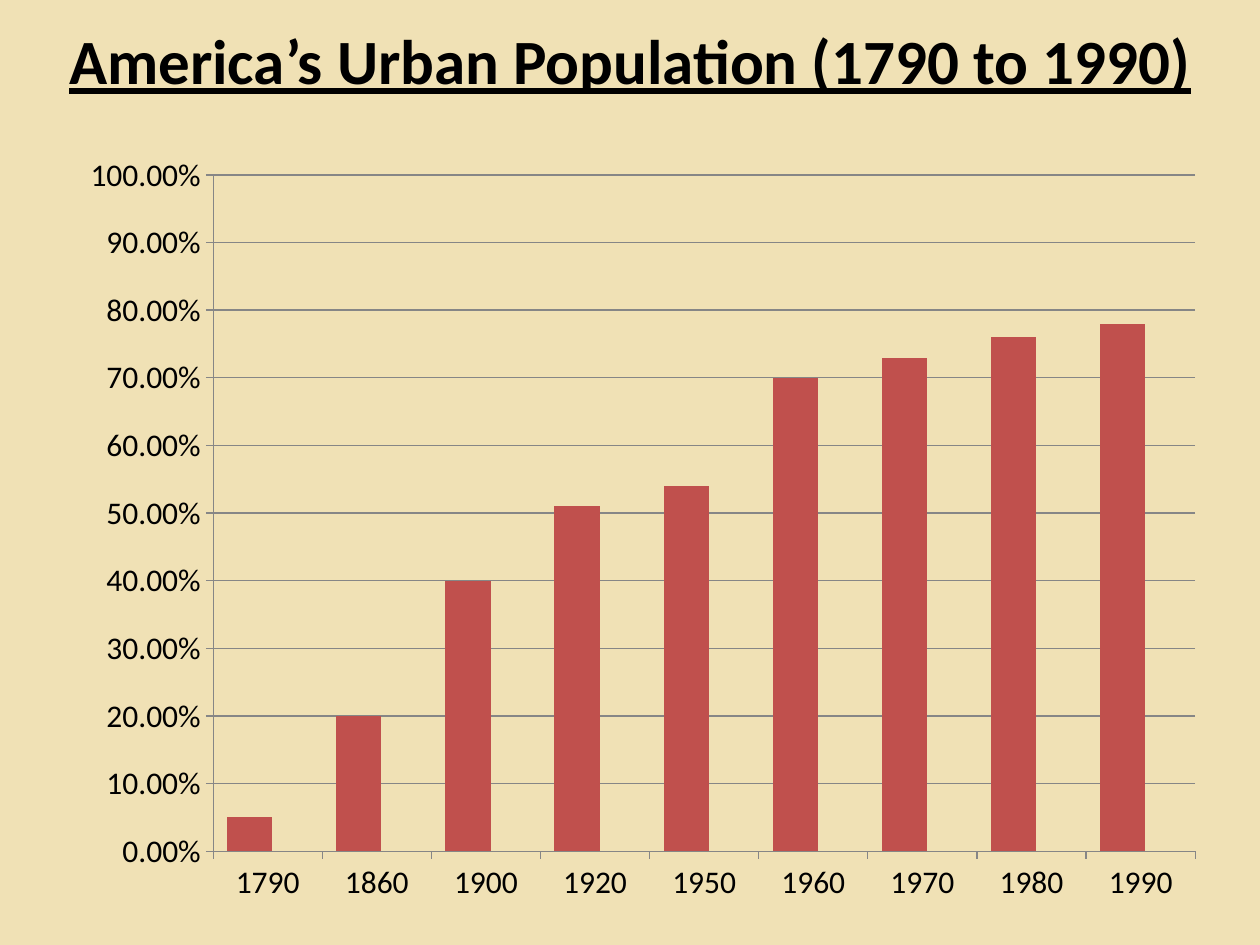
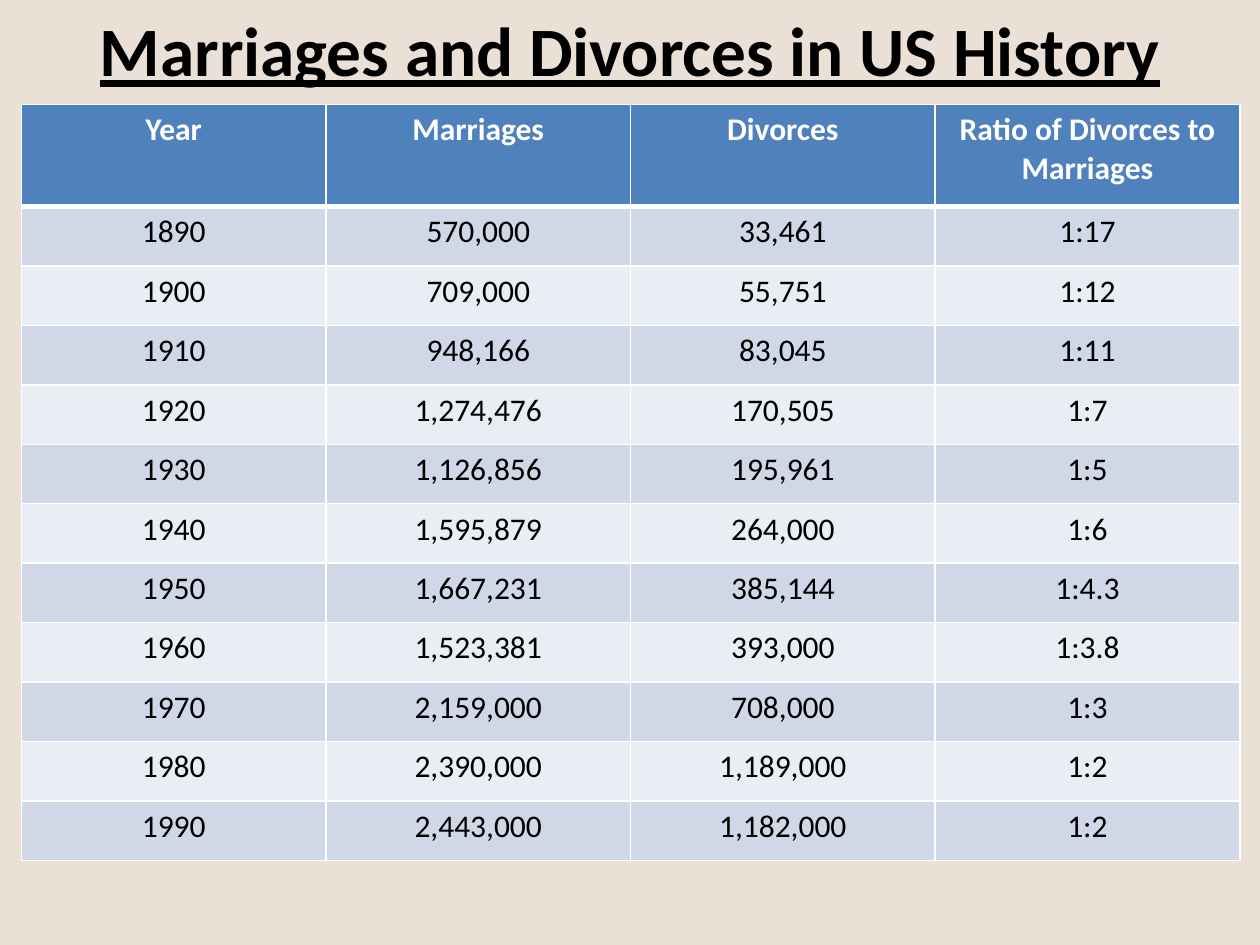
from lxml import etree
from pptx import Presentation
from pptx.chart.data import CategoryChartData
from pptx.dml.color import RGBColor
from pptx.enum.chart import XL_CHART_TYPE, XL_TICK_MARK
from pptx.enum.text import MSO_ANCHOR, PP_ALIGN
from pptx.oxml import parse_xml
from pptx.oxml.ns import nsdecls, qn
from pptx.util import Inches, Pt

COLUMNS = XL_CHART_TYPE.COLUMN_CLUSTERED
TICK_OUT, TICK_NONE = XL_TICK_MARK.OUTSIDE, XL_TICK_MARK.NONE
CENTER, MIDDLE = PP_ALIGN.CENTER, MSO_ANCHOR.MIDDLE

FONT = "Calibri"
BLACK = RGBColor(0x00, 0x00, 0x00)
WHITE = RGBColor(0xFF, 0xFF, 0xFF)
SAND = RGBColor(0xF0, 0xE1, 0xB5)
BEIGE = RGBColor(0xEB, 0xE0, 0xD6)
GREY = RGBColor(0x86, 0x86, 0x86)
RED = RGBColor(0xC0, 0x50, 0x4D)
GREEN = RGBColor(0x9B, 0xBB, 0x59)
BLUE = RGBColor(0x4F, 0x81, 0xBD)
BAND_DARK = RGBColor(0xD0, 0xD8, 0xE8)
BAND_LIGHT = RGBColor(0xE9, 0xED, 0xF4)

URBAN_SHARE = {
    "1790": 0.05, "1860": 0.2, "1900": 0.4, "1920": 0.51, "1950": 0.54,
    "1960": 0.7, "1970": 0.73, "1980": 0.76, "1990": 0.78,
}
PLOT_AREA = {"x": 0.13, "y": 0.05, "w": 0.85, "h": 0.87}

MARRIAGE_ROWS = [
    ("Year", "Marriages", "Divorces", "Ratio of Divorces to Marriages"),
    ("1890", "570,000", "33,461", "1:17"),
    ("1900", "709,000", "55,751", "1:12"),
    ("1910", "948,166", "83,045", "1:11"),
    ("1920", "1,274,476", "170,505", "1:7"),
    ("1930", "1,126,856", "195,961", "1:5"),
    ("1940", "1,595,879", "264,000", "1:6"),
    ("1950", "1,667,231", "385,144", "1:4.3"),
    ("1960", "1,523,381", "393,000", "1:3.8"),
    ("1970", "2,159,000", "708,000", "1:3"),
    ("1980", "2,390,000", "1,189,000", "1:2"),
    ("1990", "2,443,000", "1,182,000", "1:2"),
]
HEADER_HEIGHT = 0.81


def style_font(font, size, color, bold=False, underline=None):
    """Apply the shared typeface with the given size, colour and emphasis."""
    font.name, font.size, font.bold = FONT, Pt(size), bold
    font.underline = underline
    font.color.rgb = color


def add_titled_slide(prs, background, title, box, size):
    """Add a blank slide with a coloured background and an underlined title."""
    slide = prs.slides.add_slide(prs.slide_layouts[6])
    slide.background.fill.solid()
    slide.background.fill.fore_color.rgb = background
    frame = slide.shapes.add_textbox(*map(Inches, box)).text_frame
    frame.word_wrap, frame.vertical_anchor = True, MIDDLE
    frame.text = title
    heading = frame.paragraphs[0]
    heading.alignment = CENTER
    style_font(heading.runs[0].font, size, BLACK, bold=True, underline=True)
    return slide


def fix_plot_area(chart):
    """Pin the inner plot area to fixed fractions of the chart."""
    plot_area = chart._chartSpace.chart.plotArea
    for automatic in plot_area.findall(qn("c:layout")):
        plot_area.remove(automatic)
    layout = parse_xml(f"<c:layout {nsdecls('c')}><c:manualLayout/></c:layout>")
    settings = {"layoutTarget": "inner", "xMode": "edge", "yMode": "edge", **PLOT_AREA}
    for tag, value in settings.items():
        etree.SubElement(layout[0], qn(f"c:{tag}")).set("val", str(value))
    plot_area.insert(0, layout)


def add_urban_chart(slide, box):
    """Draw the urban share of the population as columns inside the box."""
    data = CategoryChartData()
    data.categories = list(URBAN_SHARE)
    data.add_series("Series 1", list(URBAN_SHARE.values()))
    for name in ("Series 2", "Series 3"):
        data.add_series(name, [None] * len(URBAN_SHARE))
    chart = slide.shapes.add_chart(COLUMNS, *map(Inches, box), data).chart
    chart.has_legend = chart.has_title = False
    style_font(chart.font, 18, BLACK)

    columns = chart.plots[0]
    columns.gap_width, columns.overlap = 62, 60
    columns.vary_by_categories = False
    for series, color in zip(columns.series, (RED, RED, GREEN)):
        series.format.fill.solid()
        series.format.fill.fore_color.rgb = color

    shares = chart.value_axis
    shares.minimum_scale, shares.maximum_scale, shares.major_unit = 0, 1, 0.1
    shares.tick_labels.number_format = "0.00%"
    shares.tick_labels.number_format_is_linked = False
    shares.has_major_gridlines = True
    for axis in (chart.category_axis, shares):
        axis.major_tick_mark, axis.minor_tick_mark = TICK_OUT, TICK_NONE
    for line in (chart.category_axis.format.line, shares.format.line,
                 shares.major_gridlines.format.line):
        line.color.rgb, line.width = GREY, Pt(0.75)
    fix_plot_area(chart)


def set_borders(cell, top, bottom):
    """Give a cell white borders, with top and bottom widths in points."""
    widths = {"lnL": 1, "lnR": 1, "lnT": top, "lnB": bottom}
    properties = cell._tc.get_or_add_tcPr()
    for position, (edge, width) in enumerate(widths.items()):
        properties.insert(position, parse_xml(
            f'<a:{edge} {nsdecls("a")} w="{Pt(width)}"><a:solidFill>'
            f'<a:srgbClr val="{WHITE}"/></a:solidFill></a:{edge}>'))


def add_marriage_table(slide, box):
    """Fill the box with the marriage and divorce table."""
    row_count, column_count = len(MARRIAGE_ROWS), len(MARRIAGE_ROWS[0])
    table = slide.shapes.add_table(row_count, column_count, *map(Inches, box)).table
    body_height = (box[3] - HEADER_HEIGHT) / (row_count - 1)
    for r, values in enumerate(MARRIAGE_ROWS):
        header = r == 0
        table.rows[r].height = Inches(HEADER_HEIGHT if header else body_height)
        fill = BLUE if header else (BAND_LIGHT, BAND_DARK)[r % 2]
        for c, value in enumerate(values):
            cell = table.cell(r, c)
            cell.text = value
            cell.fill.solid()
            cell.fill.fore_color.rgb = fill
            entry = cell.text_frame.paragraphs[0]
            entry.alignment = CENTER
            style_font(entry.runs[0].font, 18, WHITE if header else BLACK, bold=header)
            set_borders(cell, top=3 if r == 1 else 1, bottom=3 if header else 1)


def main():
    """Build both slides and save the presentation."""
    prs = Presentation()
    prs.slide_width, prs.slide_height = Inches(10), Inches(7.5)
    urban = add_titled_slide(prs, SAND, "America’s Urban Population (1790 to 1990)",
                             (0, 0.08, 10, 0.78), 36)
    add_urban_chart(urban, (0.5, 1.08, 9.17, 6.17))
    marriages = add_titled_slide(prs, BEIGE, "Marriages and Divorces in US History",
                                 (0.5, 0.08, 9, 0.62), 39.6)
    add_marriage_table(marriages, (0.17, 0.83, 9.67, 6))
    prs.save("out.pptx")


if __name__ == "__main__":
    main()
